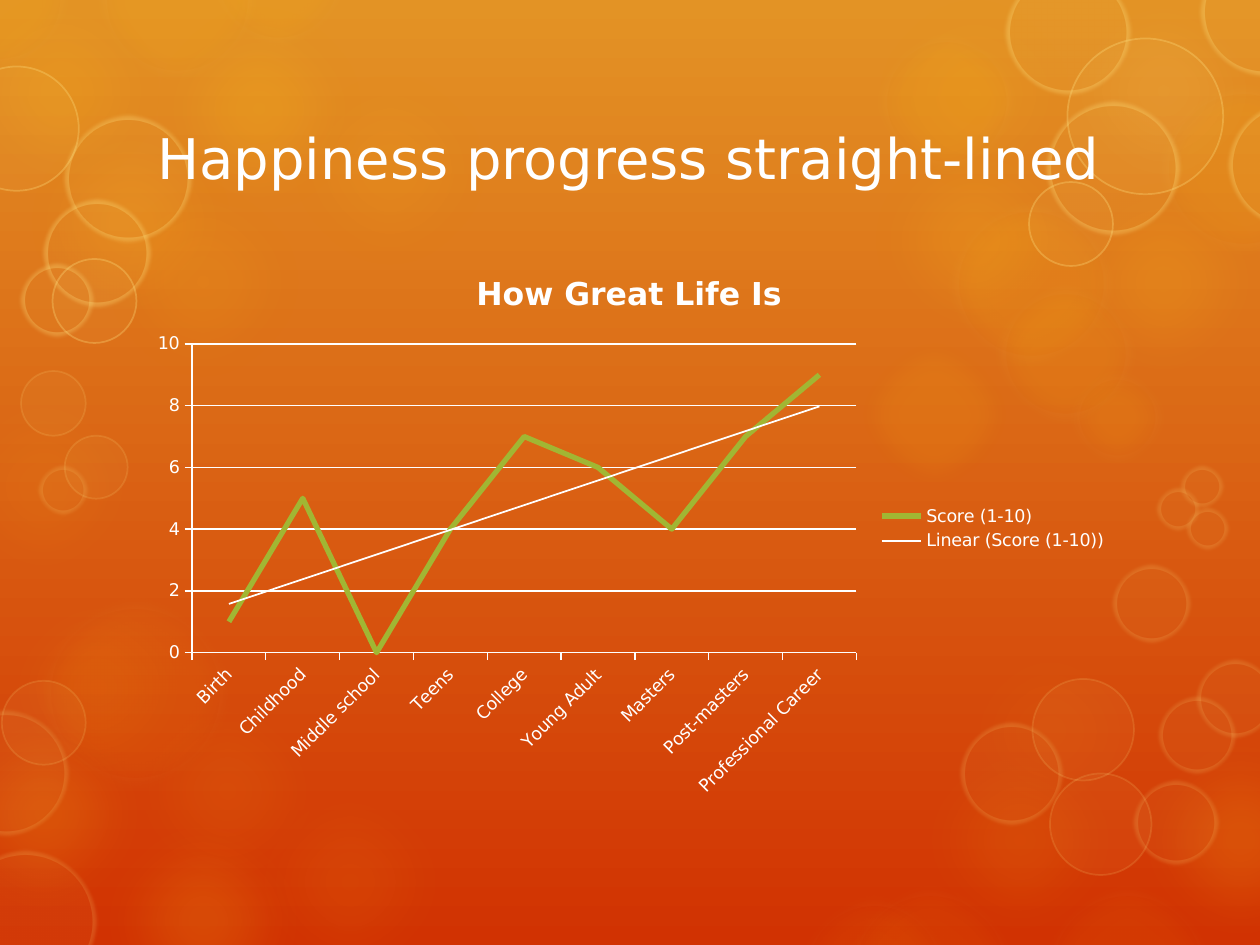
"""Builds a slide charting life happiness over a bubbly orange background."""
import pptx
import pptx.chart.data
import pptx.dml.color
import pptx.enum.chart
import pptx.enum.shapes
import pptx.enum.text
import pptx.oxml
import pptx.oxml.ns
import pptx.util

Pt = pptx.util.Pt
FONT = "DejaVu Sans"
WHITE, GREEN, AMBER, CREAM, PALE = "FFFFFF", "A1B633", "FDC61B", "FFE281", "FEEBAE"
GLOW_SIZE = 150

HEADLINE = "Happiness progress straight-lined"
CHART_TITLE = "How Great Life Is"
SERIES_NAME = "Score (1-10)"
SCORES = [
    ("Birth", 1), ("Childhood", 5), ("Middle school", 0),
    ("Teens", 4), ("College", 7), ("Young Adult", 6),
    ("Masters", 4), ("Post-masters", 7), ("Professional Career", 9),
]

GLOWS = [
    (AMBER, 8, [(-19, 318), (55, 377), (125, 429), (-50, 203)]),
    (AMBER, 10, [(41, 86), (148, 22), (482, -21), (508, 405)]),
    (AMBER, 16, [(41, 451), (634, 405), (-50, 390)]),
    (AMBER, 14, [(-40, -23)]),
    (AMBER, 20, [(73, -13)]),
    (AMBER, 15, [(0, 52), (590, 86), (482, 62)]),
    (AMBER, 5, [(525, 343)]),
    (CREAM, 10, [(590, -23)]),
]
BUBBLES = [
    (AMBER, 10, None, 12.5, [(486, 189, 96)]),
    (AMBER, 10, (PALE, 14, 6), 12.5, [
        (661, 47, 99), (500, 17, 82), (541, 114, 96), (568, 161, 82),
        (610, 210, 57), (54, -47, 94), (118, -54, 82), (-41, -42, 82)]),
    (AMBER, 6, (PALE, 14, 4), 12.5, [
        (22, 341, 110), (455, 511, 89), (482, 505, 99), (595, 505, 99)]),
    (CREAM, 5, (CREAM, 5, 15), 2.5, [
        (-26, 486, 81), (-32, 406, 71), (549, 413, 58), (648, 446, 48),
        (636, 323, 44), (662, 398, 44), (684, 377, 44), (675, 266, 24),
        (661, 279, 24), (678, 290, 24), (22, 266, 28)]),
    (CREAM, 5, (CREAM, 5, 30), 2.5, [
        (37, 66, 72), (25, 114, 61), (12, 151, 41), (575, -17, 71),
        (686, -29, 72), (702, 59, 71), (598, 58, 76)]),
    (CREAM, 5, (CREAM, 1, 15), 0, [
        (1, 389, 48), (600, 442, 58), (590, 388, 58), (12, 212, 37), (37, 249, 36)]),
    (CREAM, 5, (CREAM, 1, 30), 0, [
        (-26, 38, 71), (30, 148, 48), (610, 22, 89), (588, 104, 48)]),
]


def rgb(code):
    return pptx.dml.color.RGBColor.from_string(code)


def paint(fill, code, opacity=100):
    fill.solid()
    fill.fore_color.rgb = rgb(code)
    if opacity < 100:
        color = fill._xPr.find(".//" + pptx.oxml.ns.qn("a:srgbClr"))
        alpha = color.makeelement(pptx.oxml.ns.qn("a:alpha"), {"val": str(opacity * 1000)})
        color.append(alpha)


def style_font(font, size, bold=False):
    font.name, font.size, font.bold = FONT, Pt(size), bold
    font.color.rgb = rgb(WHITE)


def add_bubble(slide, left, top, size, code, opacity, ring, softness):
    bubble = slide.shapes.add_shape(
        pptx.enum.shapes.MSO_SHAPE.OVAL, Pt(left), Pt(top), Pt(size), Pt(size))
    bubble.shadow.inherit = False
    paint(bubble.fill, code, opacity)
    if ring:
        ring_code, width, ring_opacity = ring
        paint(bubble.line.fill, ring_code, ring_opacity)
        bubble.line.width = Pt(width)
    else:
        bubble.line.fill.background()
    if softness:
        effects = bubble._element.spPr.find(pptx.oxml.ns.qn("a:effectLst"))
        soft = effects.makeelement(
            pptx.oxml.ns.qn("a:softEdge"), {"rad": str(int(Pt(softness)))})
        effects.append(soft)


def add_background(slide):
    fill = slide.background.fill
    fill.gradient()
    fill.gradient_angle = 270
    for stop, code, position in zip(fill.gradient_stops, ("E39325", "D13202"), (0, 1)):
        stop.color.rgb = rgb(code)
        stop.position = position
    for code, opacity, corners in GLOWS:
        for left, top in corners:
            add_bubble(slide, left, top, GLOW_SIZE, code, opacity, None, 32)
    for code, opacity, ring, softness, circles in BUBBLES:
        for left, top, size in circles:
            add_bubble(slide, left, top, size, code, opacity, ring, softness)


def add_headline(slide):
    headline = slide.shapes.add_textbox(Pt(79), Pt(53), Pt(561), Pt(73)).text_frame
    headline.word_wrap = True
    headline.vertical_anchor = pptx.enum.text.MSO_ANCHOR.MIDDLE
    paragraph = headline.paragraphs[0]
    paragraph.text = HEADLINE
    paragraph.alignment = pptx.enum.text.PP_ALIGN.CENTER
    style_font(paragraph.font, 32)


def add_trend(series):
    trend = pptx.oxml.parse_xml(
        f'<c:trendline {pptx.oxml.ns.nsdecls("c", "a")}><c:spPr><a:ln w="{int(Pt(1))}">'
        f'<a:solidFill><a:srgbClr val="{WHITE}"/></a:solidFill></a:ln></c:spPr>'
        '<c:trendlineType val="linear"/><c:dispRSqr val="0"/><c:dispEq val="0"/>'
        '</c:trendline>')
    series._element.find(pptx.oxml.ns.qn("c:cat")).addprevious(trend)


def add_score_chart(slide):
    data = pptx.chart.data.CategoryChartData()
    data.categories = [stage for stage, _ in SCORES]
    data.add_series(SERIES_NAME, [score for _, score in SCORES])
    chart = slide.shapes.add_chart(
        pptx.enum.chart.XL_CHART_TYPE.LINE, Pt(79), Pt(142.5), Pt(561), Pt(319), data).chart
    style_font(chart.font, 10)

    chart.has_title = True
    title = chart.chart_title.text_frame.paragraphs[0]
    title.text = CHART_TITLE
    style_font(title.font, 18, True)
    chart.has_legend = True
    chart.legend.position = pptx.enum.chart.XL_LEGEND_POSITION.RIGHT
    chart.legend.include_in_layout = False

    scale = chart.value_axis
    scale.minimum_scale, scale.maximum_scale, scale.major_unit = 0, 10, 2
    scale.has_major_gridlines = True
    for axis in (scale, chart.category_axis):
        axis.major_tick_mark = pptx.enum.chart.XL_TICK_MARK.OUTSIDE
    for line in (scale.format.line, chart.category_axis.format.line,
                 scale.major_gridlines.format.line):
        paint(line.fill, WHITE)
        line.width = Pt(0.75)

    chart.plots[0].vary_by_categories = False
    score = chart.plots[0].series[0]
    score.smooth = False
    score.marker.style = pptx.enum.chart.XL_MARKER_STYLE.NONE
    paint(score.format.line.fill, GREEN)
    score.format.line.width = Pt(3)
    add_trend(score)


def main():
    deck = pptx.Presentation()
    deck.slide_width, deck.slide_height = Pt(720), Pt(540)
    slide = deck.slides.add_slide(deck.slide_layouts[6])
    add_background(slide)
    add_headline(slide)
    add_score_chart(slide)
    deck.save("out.pptx")


if __name__ == "__main__":
    main()
